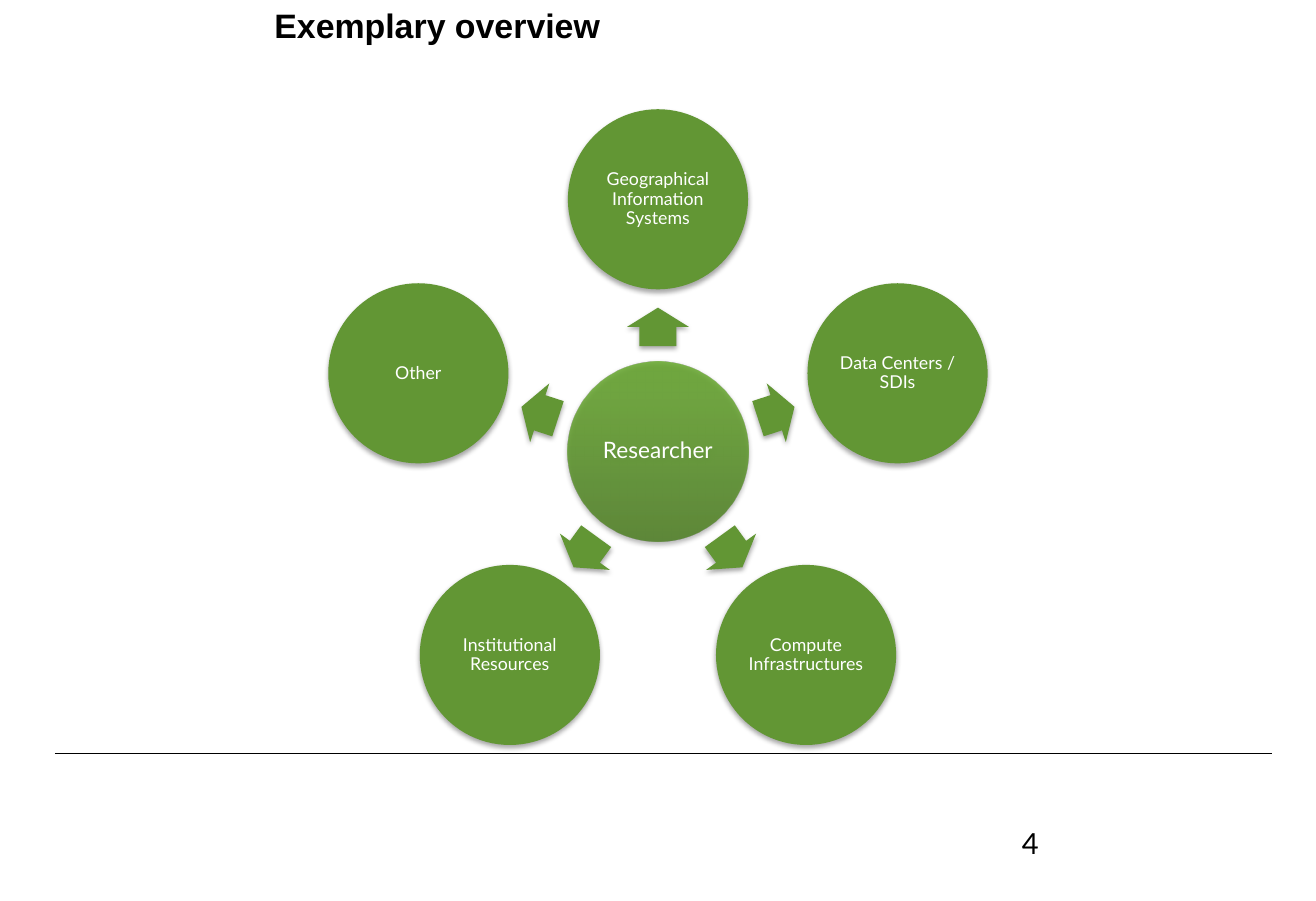
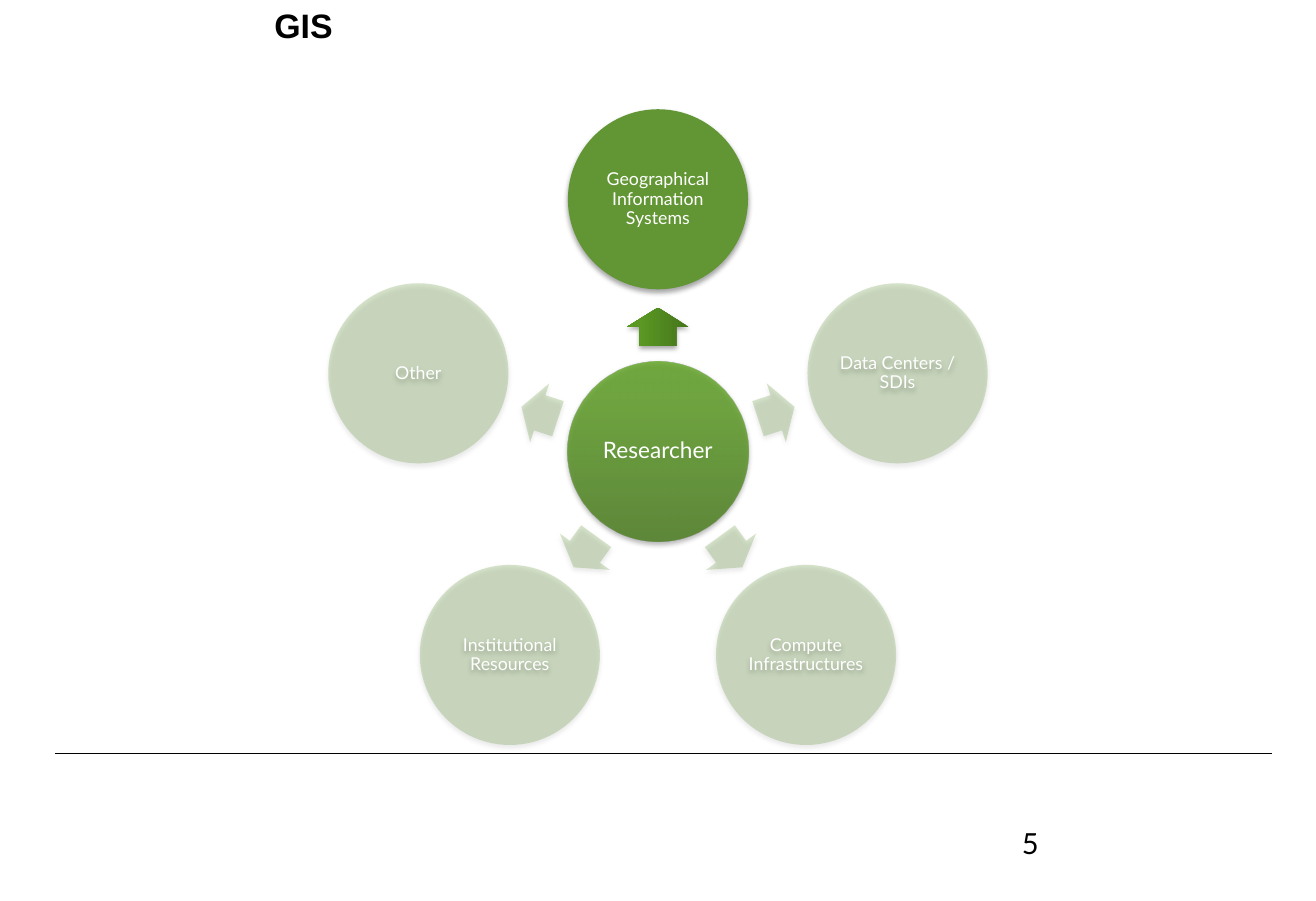
"""Build two slides showing a researcher surrounded by five kinds of resources."""
from math import cos, radians, sin

from lxml.etree import SubElement
from pptx import Presentation
from pptx.dml.color import RGBColor
from pptx.enum.shapes import MSO_CONNECTOR, MSO_SHAPE
from pptx.enum.text import MSO_ANCHOR, MSO_AUTO_SIZE, PP_ALIGN
from pptx.oxml.ns import qn
from pptx.util import Cm, Pt

COLOURS = {"black": "000000", "white": "FFFFFF", "green": "629634"}
HUB_GRADIENT = [(0, "487B1C"), (80, "5EA024"), (100, "5EA322")]
ARROW_GRADIENT = [(0, "45751B"), (80, "5A9823"), (100, "5A9B20")]
RESOURCES = [
    "Geographical Information Systems",
    "Data Centers / SDIs",
    "Compute Infrastructures",
    "Institutional Resources",
    "Other",
]
CENTRE_X, CENTRE_Y = 14.39, 9.87
CIRCLE_SIZE = 3.94
CIRCLE_ORBIT, ARROW_ORBIT = 5.51, 2.72
ARROW_LENGTH, ARROW_WIDTH = 0.84, 1.35


class Slides:
    def __init__(self):
        self.deck = Presentation()
        self.deck.slide_width, self.deck.slide_height = Cm(28.78), Cm(19.71)
        self.page = None

    def start(self, title, number):
        self.page = self.deck.slides.add_slide(self.deck.slide_layouts[5])
        self.rule()
        self.title(title)
        self.page_number(number)

    def style(self, para, size, font, colour, bold=False):
        for span in para.runs:
            span.font.size, span.font.name, span.font.bold = Pt(size), font, bold
            span.font.color.rgb = RGBColor.from_string(COLOURS[colour])

    def margins(self, frame, horizontal, vertical):
        frame.margin_left = frame.margin_right = Cm(horizontal)
        frame.margin_top = frame.margin_bottom = Cm(vertical)
        frame.word_wrap = True

    def rule(self):
        line = self.page.shapes.add_connector(
            MSO_CONNECTOR.STRAIGHT, Cm(1.2), Cm(16.48), Cm(27.81), Cm(16.48))
        line.line.color.rgb = RGBColor.from_string(COLOURS["black"])
        line.line.width = Pt(0.75)
        SubElement(line.element.spPr, qn("a:effectLst"))

    def title(self, text):
        box = self.page.shapes.title
        box.left, box.top, box.width, box.height = Cm(6), Cm(0.13), Cm(22.78), Cm(1.78)
        frame = box.text_frame
        frame.text = text
        self.margins(frame, 0, 0)
        frame.auto_size = MSO_AUTO_SIZE.NONE
        frame.vertical_anchor = MSO_ANCHOR.TOP
        para = frame.paragraphs[0]
        para.alignment = PP_ALIGN.LEFT
        para.line_spacing = Pt(24.6)
        self.style(para, 21, "Arial", "black", bold=True)

    def page_number(self, number):
        box = self.page.shapes.add_textbox(Cm(22.07), Cm(17.93), Cm(6.71), Cm(1.04))
        box.text_frame.text = str(number)
        self.margins(box.text_frame, 0.28, 0.13)
        self.style(box.text_frame.paragraphs[0], 18, "Lato", "black")

    def shape(self, kind, x, y, width, height, opacity=100, gradient=None):
        shape = self.page.shapes.add_shape(
            kind, Cm(x - width / 2), Cm(y - height / 2), Cm(width), Cm(height))
        shape.line.fill.background()
        if gradient:
            self.gradient(shape, gradient, opacity)
        else:
            shape.fill.solid()
            shape.fill.fore_color.rgb = RGBColor.from_string(COLOURS["green"])
            colour = shape.element.spPr.find(qn("a:solidFill"))[0]
            self.opacity(colour, opacity)
        self.shadow(shape)
        return shape

    def opacity(self, colour, percent):
        if percent < 100:
            SubElement(colour, qn("a:alpha"), val=str(percent * 1000))

    def gradient(self, shape, stops, opacity):
        shape.fill.gradient()
        shape.fill.gradient_angle = 90
        stop_list = shape.element.spPr.find(qn("a:gradFill")).find(qn("a:gsLst"))
        for stop in list(stop_list):
            stop_list.remove(stop)
        for position, value in stops:
            stop = SubElement(stop_list, qn("a:gs"), pos=str(position * 1000))
            self.opacity(SubElement(stop, qn("a:srgbClr"), val=value), opacity)

    def shadow(self, shape):
        shape.shadow.inherit = False
        effects = shape.element.spPr.find(qn("a:effectLst"))
        shadow = SubElement(
            effects, qn("a:outerShdw"), blurRad=str(Pt(3.1)), dist=str(Pt(1.8)),
            dir="5400000", rotWithShape="0")
        self.opacity(SubElement(shadow, qn("a:srgbClr"), val=COLOURS["black"]), 35)

    def circle(self, text, x, y, size, **fill):
        circle = self.shape(MSO_SHAPE.OVAL, x, y, CIRCLE_SIZE, CIRCLE_SIZE, **fill)
        frame = circle.text_frame
        frame.text = text
        self.margins(frame, 0.05, 0.05)
        frame.vertical_anchor = MSO_ANCHOR.MIDDLE
        para = frame.paragraphs[0]
        para.alignment = PP_ALIGN.CENTER
        para.line_spacing = 0.9
        para.space_after = Pt(round(size * 0.35))
        self.style(para, size, "Lato", "white")

    def arrow(self, x, y, angle, **fill):
        arrow = self.shape(MSO_SHAPE.RIGHT_ARROW, x, y, ARROW_LENGTH, ARROW_WIDTH, **fill)
        arrow.adjustments[0], arrow.adjustments[1] = 0.6, 0.5
        arrow.rotation = angle % 360

    def wheel(self, focus=None):
        self.circle("Researcher", CENTRE_X, CENTRE_Y, 14, gradient=HUB_GRADIENT, opacity=80)
        for index, name in enumerate(RESOURCES):
            angle = index * 360 / len(RESOURCES) - 90
            across, down = cos(radians(angle)), sin(radians(angle))
            opacity = 100 if focus in (None, name) else 25
            self.arrow(
                CENTRE_X + ARROW_ORBIT * across, CENTRE_Y + ARROW_ORBIT * down, angle,
                opacity=opacity, gradient=ARROW_GRADIENT if focus == name else None)
            self.circle(
                name, CENTRE_X + CIRCLE_ORBIT * across, CENTRE_Y + CIRCLE_ORBIT * down,
                11, opacity=opacity)


def main():
    slides = Slides()
    slides.start("Exemplary overview", 4)
    slides.wheel()
    slides.start("GIS", 5)
    slides.wheel(focus=RESOURCES[0])
    slides.deck.save("out.pptx")


if __name__ == "__main__":
    main()
